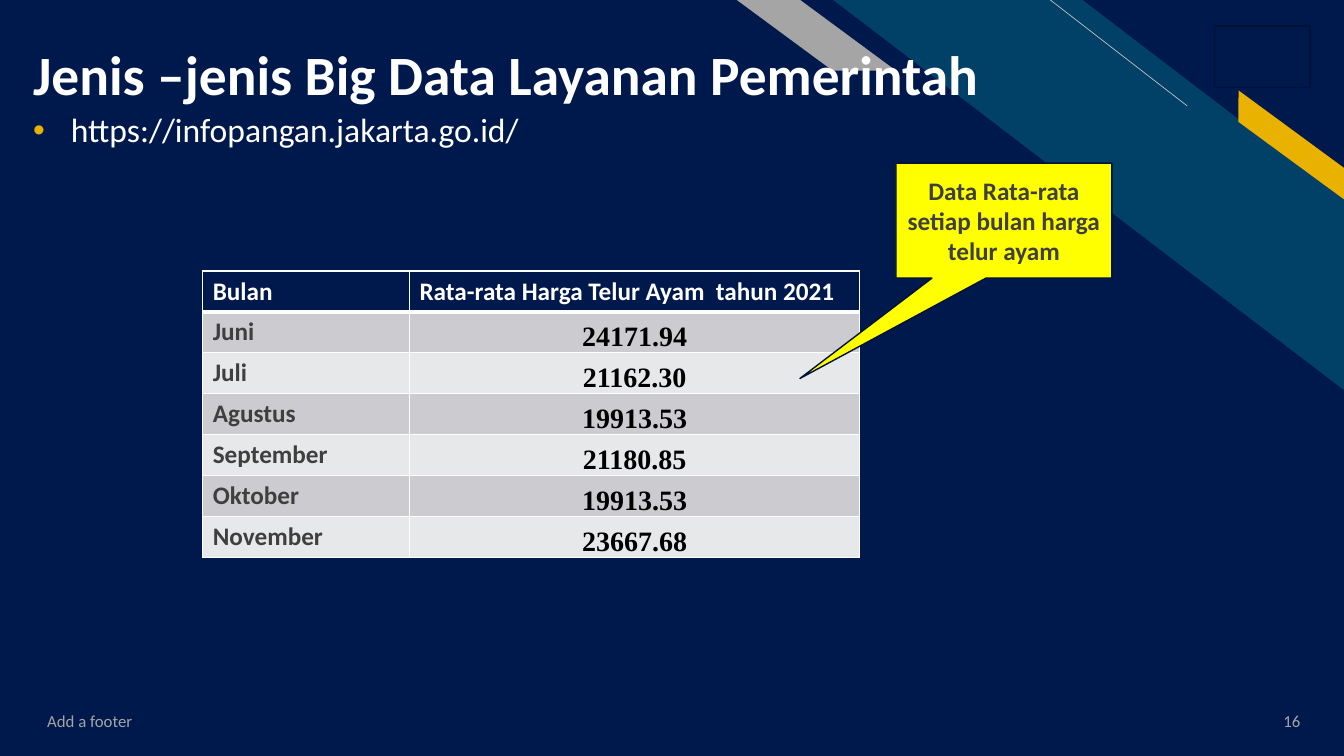
from collections import namedtuple

from lxml.etree import SubElement
from pptx import Presentation
from pptx.dml.color import RGBColor
from pptx.enum.shapes import MSO_CONNECTOR as Connector, MSO_SHAPE as Shape
from pptx.enum.text import MSO_ANCHOR as Anchor, MSO_AUTO_SIZE as AutoSize, PP_ALIGN as Align
from pptx.oxml.ns import qn
from pptx.util import Cm, Pt

Box = namedtuple("Box", "left top width height")

NAVY, TEAL, GOLD, GRAY = "00194C", "014067", "EAB200", "A5A5A5"
WHITE, DARK, OUTLINE = "FFFFFF", "3F3F3F", "001238"
HEADINGS = ("Bulan", "Rata-rata Harga Telur Ayam  tahun 2021")
PRICES = (
    ("Juni", "24171.94"),
    ("Juli", "21162.30"),
    ("Agustus", "19913.53"),
    ("September", "21180.85"),
    ("Oktober", "19913.53"),
    ("November", "23667.68"),
)


def color(code):
    """Turn a hex string into a colour."""
    return RGBColor.from_string(code)


def lengths(box):
    """Give the sides of a box in centimetres as lengths."""
    return [Cm(side) for side in box]


def style(para, size, code, bold=False, align=Align.LEFT, name="Calibri"):
    """Set the font and alignment of a paragraph."""
    font = para.font
    font.size, font.bold, font.name = Pt(size), bold, name
    font.color.rgb = color(code)
    para.alignment = align


def add_figure(page, kind, box, fill, line=None, flip=False):
    """Add a flat preset shape, mirrored if asked."""
    figure = page.shapes.add_shape(kind, *lengths(box))
    figure.shadow.inherit = False
    figure.fill.solid()
    figure.fill.fore_color.rgb = color(fill)
    if line:
        figure.line.color.rgb = color(line)
        figure.line.width = Pt(1)
    else:
        figure.line.fill.background()
    if flip:
        figure._element.spPr.get_or_add_xfrm().set("flipH", "1")
    return figure


def add_bands(page, box):
    """Draw the slanted bands in the top right corner of the box."""
    right, top = box.left + box.width, box.top
    stripe = add_figure(page, Shape.DIAGONAL_STRIPE, Box(right - 12.87, top, 12.87, 9.83), TEAL, flip=True)
    stripe.adjustments[0] = 0.512
    ends = (right - 3.95, top + 2.67, right - 7.4, top)
    thread = page.shapes.add_connector(Connector.STRAIGHT, *lengths(ends))
    thread.line.color.rgb = color("BFBFBF")
    thread.line.width = Pt(0.5)
    SubElement(thread._element.spPr, qn("a:effectLst"))
    ribbon = add_figure(page, Shape.PARALLELOGRAM, Box(right - 3.21, top + 3.33, 3.76, 0.64), GOLD, flip=True)
    ribbon.adjustments[0] = 0.72
    ribbon.rotation = 36.3
    band = add_figure(page, Shape.PARALLELOGRAM, Box(right - 15.3, top, 4.01, 1.78), GRAY, flip=True)
    band.adjustments[0] = 1.356


def fill_placeholder(page, holder, box, text):
    """Move a placeholder to the box, in front of the bands, and write its text."""
    page.shapes._spTree.append(holder._element)
    holder.left, holder.top, holder.width, holder.height = lengths(box)
    frame = holder.text_frame
    frame.text = text
    frame.word_wrap, frame.auto_size = True, AutoSize.NONE
    para = frame.paragraphs[0]
    para.line_spacing = 0.9
    return frame, para


def add_title(page, box, text):
    """Write the title at the foot of the box."""
    frame, para = fill_placeholder(page, page.shapes.title, box, text)
    frame.vertical_anchor, frame.margin_bottom = Anchor.BOTTOM, 0
    style(para, 39.6, WHITE, bold=True)


def add_bullet(page, box, text):
    """Write the body as one line with a golden bullet."""
    frame, para = fill_placeholder(page, page.placeholders[1], box, text)
    frame.vertical_anchor = Anchor.TOP
    style(para, 24, WHITE)
    para.space_before = Pt(10)
    props = para._p.get_or_add_pPr()
    props.set("marL", str(Cm(0.95)))
    props.set("indent", str(Cm(-0.95)))
    SubElement(SubElement(props, qn("a:buClr")), qn("a:srgbClr"), val=GOLD)
    SubElement(props, qn("a:buFont"), typeface="Arial")
    SubElement(props, qn("a:buChar"), char="•")


def add_note(page, box, text, align):
    """Write a small gray line in the foot of the page."""
    frame = page.shapes.add_textbox(*lengths(box)).text_frame
    frame.word_wrap, frame.vertical_anchor = True, Anchor.MIDDLE
    frame.text = text
    style(frame.paragraphs[0], 12, GRAY, align=align)


def set_borders(cell, top, bottom):
    """Give a cell white borders of the given top and bottom widths."""
    props = cell._tc.get_or_add_tcPr()
    for side, width in (("L", 1), ("R", 1), ("T", top), ("B", bottom)):
        line = SubElement(props, qn(f"a:ln{side}"), w=str(Pt(width)))
        SubElement(SubElement(line, qn("a:solidFill")), qn("a:srgbClr"), val=WHITE)


def add_price_table(page, box):
    """Fill the box with the monthly egg prices."""
    rows = (HEADINGS,) + PRICES
    table = page.shapes.add_table(len(rows), 2, *lengths(box)).table
    months_width = 5.21
    table.columns[0].width = Cm(months_width)
    table.columns[1].width = Cm(box.width - months_width)
    for r, texts in enumerate(rows):
        table.rows[r].height = Cm(box.height / len(rows))
        fill = NAVY if r == 0 else ("E7E8E9", "CCCCD0")[r % 2]
        for c, text in enumerate(texts):
            cell = table.cell(r, c)
            set_borders(cell, top=3 if r == 1 else 1, bottom=3 if r == 0 else 1)
            cell.fill.solid()
            cell.fill.fore_color.rgb = color(fill)
            cell.text = text
            para = cell.text_frame.paragraphs[0]
            if r and c:
                cell.vertical_anchor = Anchor.BOTTOM
                cell.margin_left = cell.margin_right = cell.margin_top = Cm(0.03)
                cell.margin_bottom = 0
                style(para, 20, "000000", True, Align.CENTER, "Times New Roman")
            else:
                style(para, 18, DARK if r else WHITE, bold=True)


def add_callout(page, box, text):
    """Draw the yellow callout that points at the table."""
    callout = add_figure(page, Shape.RECTANGULAR_CALLOUT, box, "FFFF00", OUTLINE)
    callout.adjustments[0], callout.adjustments[1] = -0.945, 1.372
    frame = callout.text_frame
    frame.word_wrap, frame.vertical_anchor = True, Anchor.MIDDLE
    frame.text = text
    style(frame.paragraphs[0], 18, DARK, bold=True, align=Align.CENTER)


def add_price_page(deck, box):
    """Build the page about egg prices."""
    page = deck.slides.add_slide(deck.slide_layouts[1])
    page.background.fill.solid()
    page.background.fill.fore_color.rgb = color(NAVY)
    add_bands(page, box)
    add_title(page, Box(0.58, 0.64, 26.29, 2.08), "Jenis –jenis Big Data Layanan Pemerintah")
    add_bullet(page, Box(0.58, 2.74, 30.38, 1.55), "https://infopangan.jakarta.go.id/")
    add_note(page, Box(0.94, 17.65, 11.43, 1.02), "Add a footer", Align.LEFT)
    add_note(page, Box(30.96, 17.65, 2.06, 1.02), "16", Align.RIGHT)
    add_figure(page, Shape.RECTANGLE, Box(30.61, 0.66, 2.41, 1.55), NAVY, OUTLINE)
    add_price_table(page, Box(5.11, 6.83, 16.56, 7.21))
    add_callout(page, Box(22.58, 4.11, 5.44, 2.9), "Data Rata-rata setiap bulan harga telur ayam")


def main():
    """Make the deck and save it."""
    deck = Presentation()
    box = Box(0, 0, 33.87, 19.05)
    deck.slide_width, deck.slide_height = Cm(box.width), Cm(box.height)
    add_price_page(deck, box)
    deck.save("out.pptx")


if __name__ == "__main__":
    main()
